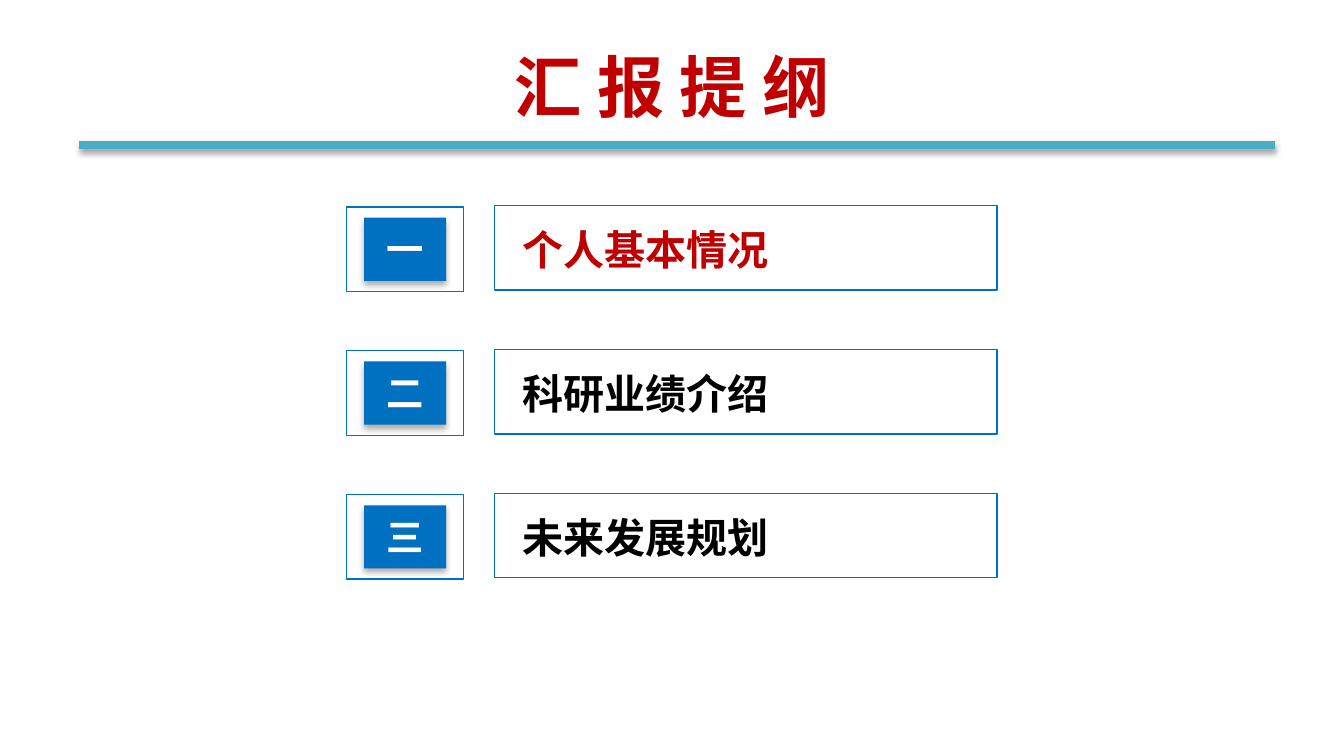
"""Build the outline slide: a ruled title above three numbered topics."""
from lxml.etree import SubElement as Sub
from pptx import Presentation
from pptx.dml.color import RGBColor as RGB
from pptx.enum.shapes import MSO_CONNECTOR as Link, MSO_SHAPE as Kind
from pptx.enum.text import MSO_ANCHOR as Anchor, PP_ALIGN as Align
from pptx.oxml.ns import qn
from pptx.util import Inches, Pt

TITLE = "汇 报 提 纲"
TOPICS = [("一", "个人基本情况"), ("二", "科研业绩介绍"), ("三", "未来发展规划")]
ACTIVE = 0

THEME = {
    "font": "Noto Sans CJK SC",
    "red": "C00000", "brown": "984807", "teal": "4BACC6",
    "blue": "0070C0", "white": "FFFFFF", "black": "000000",
    "title": 36, "number": 20, "topic": 22,
    "rule": 4.5, "edge": 0.75,
}
WIDE = 10
HIGH = WIDE * 9 / 16
TOP, STEP = 1.54, 1.07
COLS = {
    "frame": (2.58, 0, 0.87, 0.63),
    "tile": (2.71, 0.08, 0.61, 0.47),
    "number": (2.72, 0.09, 0.59, 0.44),
    "bar": (3.68, -0.01, 3.74, 0.63),
    "topic": (3.79, 0.08, 3.58, 0.47),
}


def tint(name):
    return RGB.from_string(THEME[name])


def shade(shape, alpha, blur, dist):
    fx = Sub(shape._element.spPr, qn("a:effectLst"))
    cast = Sub(fx, qn("a:outerShdw"), blurRad=str(Pt(blur)),
               dist=str(Pt(dist)), dir="5400000", rotWithShape="0")
    tone = Sub(cast, qn("a:srgbClr"), val=THEME["black"])
    Sub(tone, qn("a:alpha"), val=str(alpha * 1000))


def box(slide, spot, fill=None):
    shape = slide.shapes.add_shape(Kind.RECTANGLE, *map(Inches, spot))
    if fill:
        shape.fill.solid()
        shape.fill.fore_color.rgb = tint(fill)
        shape.line.fill.background()
        shade(shape, 32, 3.5, 2.2)
    else:
        shape.fill.background()
        shape.line.color.rgb = tint("blue")
        shape.line.width = Pt(THEME["edge"])
        shape.shadow.inherit = False


def label(slide, spot, text, size, color, align=Align.CENTER):
    frame = slide.shapes.add_textbox(*map(Inches, spot)).text_frame
    frame.word_wrap = True
    frame.vertical_anchor = Anchor.MIDDLE
    frame.text = text
    para = frame.paragraphs[0]
    para.alignment = align
    font = para.runs[0].font
    font.size, font.bold, font.name = Pt(THEME[size]), True, THEME["font"]
    font.color.rgb = tint(color)
    Sub(font._element, qn("a:ea"), typeface=THEME["font"])
    return frame


def head(slide):
    spot = (3.82, 0.29, 2.36, 0.59)
    frame = label(slide, spot, TITLE, "title", "red")
    frame.word_wrap = False
    frame.vertical_anchor = Anchor.TOP
    frame.margin_left = frame.margin_right = 0
    props = frame.paragraphs[0].runs[0].font._element
    edge = Sub(props, qn("a:ln"), w=str(Pt(THEME["edge"])))
    Sub(Sub(edge, qn("a:solidFill")), qn("a:srgbClr"), val=THEME["brown"])
    props.insert(0, edge)
    ends = map(Inches, (0.59, 1.08, 9.49, 1.08))
    rule = slide.shapes.add_connector(Link.STRAIGHT, *ends)
    rule.line.color.rgb = tint("teal")
    rule.line.width = Pt(THEME["rule"])
    shade(rule, 35, 3.1, 1.8)


def row(slide, index, number, topic):
    at = {key: (x, TOP + index * STEP + y, w, h)
          for key, (x, y, w, h) in COLS.items()}
    box(slide, at["frame"])
    box(slide, at["tile"], "blue")
    label(slide, at["number"], number, "number", "white")
    box(slide, at["bar"])
    color = "red" if index == ACTIVE else "black"
    label(slide, at["topic"], topic, "topic", color, Align.JUSTIFY)


def main():
    deck = Presentation()
    deck.slide_width, deck.slide_height = Inches(WIDE), Inches(HIGH)
    slide = deck.slides.add_slide(deck.slide_layouts[6])
    head(slide)
    for index, (number, topic) in enumerate(TOPICS):
        row(slide, index, number, topic)
    deck.save("out.pptx")


if __name__ == "__main__":
    main()
